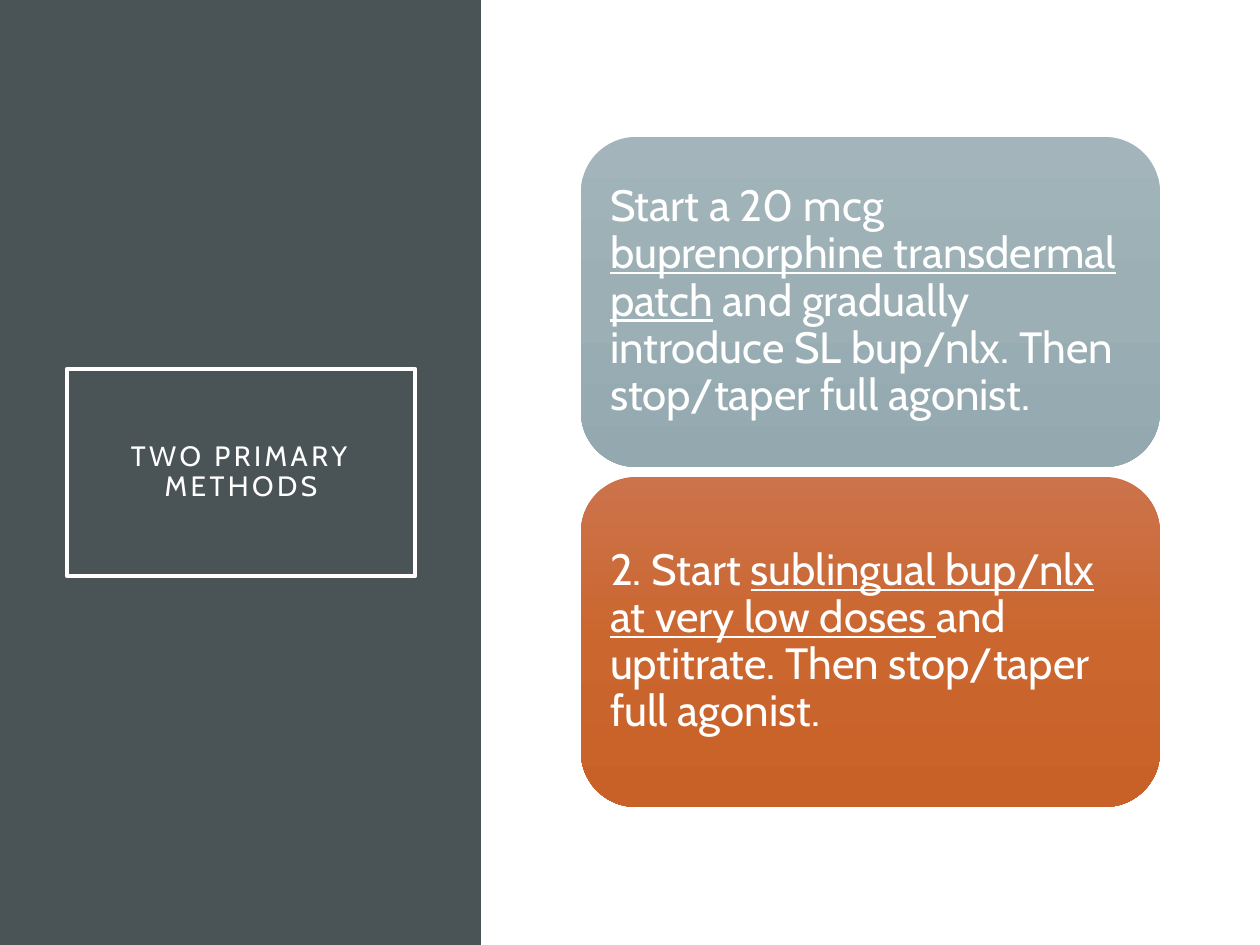
from copy import deepcopy

from pptx import Presentation
from pptx.dml.color import RGBColor
from pptx.enum.shapes import MSO_SHAPE
from pptx.enum.text import MSO_ANCHOR, MSO_AUTO_SIZE, PP_ALIGN
from pptx.oxml.ns import qn
from pptx.util import Emu, Pt

RECTANGLE, ROUNDED = MSO_SHAPE.RECTANGLE, MSO_SHAPE.ROUNDED_RECTANGLE
MIDDLE, NO_FIT = MSO_ANCHOR.MIDDLE, MSO_AUTO_SIZE.NONE
LEFT, CENTER = PP_ALIGN.LEFT, PP_ALIGN.CENTER

PX = 914400 / 126
TITLE_ONLY = 5
FONT = "Cabin"
COLORS = {"white": "FFFFFF", "panel": "4A5356"}
GRADIENTS = {
    "blue": ("A3B5BB", "9BAFB5", "93A9AF"),
    "orange": ("CC734B", "CB662F", "C86128"),
}


def px(length):
    return Emu(round(length * PX))


def color(name):
    return RGBColor.from_string(COLORS[name])


class SlideBuilder:
    def __init__(self, deck):
        self.slide = deck.slides.add_slide(deck.slide_layouts[TITLE_ONLY])

    def shape(self, kind, left, top, width, height):
        shape = self.slide.shapes.add_shape(
            kind, px(left), px(top), px(width), px(height))
        shape.shadow.inherit = False
        shape.line.fill.background()
        return shape

    def panel(self, left, top, width, height):
        panel = self.shape(RECTANGLE, left, top, width, height)
        panel.fill.solid()
        panel.fill.fore_color.rgb = color("panel")
        return panel

    def text(self, shape, spans, size, align, inset):
        """Fill a shape with one paragraph of (text, underlined) spans."""
        frame = shape.text_frame
        frame.word_wrap = True
        frame.auto_size = NO_FIT
        frame.vertical_anchor = MIDDLE
        frame.margin_left = frame.margin_right = px(inset)
        frame.margin_top = frame.margin_bottom = px(inset)
        para = frame.paragraphs[0]
        para.alignment = align
        para.line_spacing = 0.9
        para.font.name = FONT
        para.font.size = Pt(size)
        para.font.color.rgb = color("white")
        for words, underlined in spans:
            span = para.add_run()
            span.text = words
            if underlined:
                span.font.underline = True
        return para

    def title(self, words, left, top, width, height):
        title = self.slide.shapes.title
        title.left, title.top = px(left), px(top)
        title.width, title.height = px(width), px(height)
        title.line.color.rgb = color("white")
        title.line.width = Pt(2.5)
        para = self.text(title, [(words, False)], 16, CENTER, 25)
        # Letter spacing of 2 pt
        para.runs[0].font._element.set("spc", "200")
        # Bring the title in front of the panel
        self.slide.shapes._spTree.append(title._element)

    def gradient(self, shape, stops):
        shape.fill.gradient()
        shape.fill.gradient_angle = 270
        # The default gradient has two stops; add one in the middle
        stop_list = shape._element.spPr.find(qn("a:gradFill")).find(qn("a:gsLst"))
        middle = deepcopy(stop_list[0])
        stop_list.insert(1, middle)
        for index, (stop, value) in enumerate(zip(shape.fill.gradient_stops, stops)):
            stop.position = index / (len(stops) - 1)
            stop.color.rgb = RGBColor.from_string(value)

    def card(self, spans, stops, left, top, width, height):
        card = self.shape(ROUNDED, left, top, width, height)
        self.gradient(card, stops)
        self.text(card, spans, 25, LEFT, 13)


def main():
    deck = Presentation()
    deck.slide_width, deck.slide_height = px(1260), px(945)
    builder = SlideBuilder(deck)

    # Dark side panel with the framed title
    builder.panel(0, 0, 481, 945)
    builder.title("TWO PRIMARY METHODS", 67, 369, 348, 207)

    # One card for each method
    methods = [
        ("blue", [
            ("Start a 20 mcg ", False),
            ("buprenorphine transdermal patch", True),
            (" and gradually introduce SL bup/nlx. Then stop/taper full agonist.", False),
        ]),
        ("orange", [
            ("2. Start ", False),
            ("sublingual bup/nlx at very low doses ", True),
            ("and uptitrate. Then stop/taper full agonist.", False),
        ]),
    ]
    card_height, gap = 330, 10
    for row, (shade, spans) in enumerate(methods):
        top = 137 + row * (card_height + gap)
        builder.card(spans, GRADIENTS[shade], 581, top, 579, card_height)

    deck.save("out.pptx")


if __name__ == "__main__":
    main()
